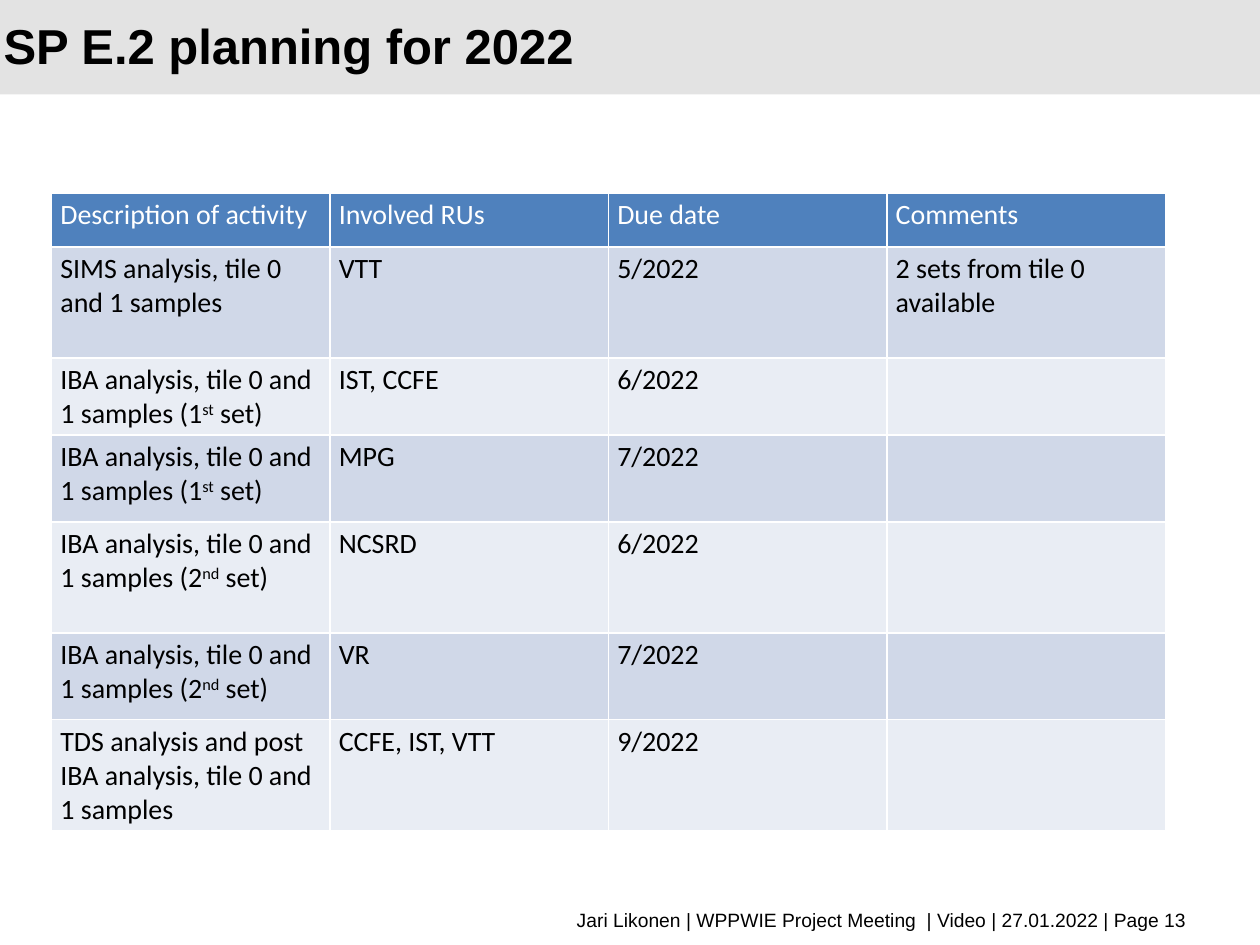
from dataclasses import dataclass

import lxml.etree
import pptx
import pptx.dml.color
import pptx.enum.shapes
import pptx.enum.text
import pptx.oxml.ns
import pptx.util

Inches = pptx.util.Inches
Pt = pptx.util.Pt
ALIGN = pptx.enum.text.PP_ALIGN
ANCHOR = pptx.enum.text.MSO_ANCHOR

COLORS = {
    "banner": "E3E3E3",
    "header": "4F81BD",
    "odd_row": "D0D8E8",
    "even_row": "E9EDF4",
    "white": "FFFFFF",
    "black": "000000",
}


@dataclass
class Activity:
    description: str  # a part between ^ marks is raised
    units: str
    due_date: str
    comments: str
    height: float


HEADER = Activity("Description of activity", "Involved RUs", "Due date", "Comments", 0.43)
FIRST_SET = "IBA analysis, tile 0 and 1 samples (1^st^ set)"
SECOND_SET = "IBA analysis, tile 0 and 1 samples (2^nd^ set)"
ACTIVITIES = [
    Activity("SIMS analysis, tile 0 and 1 samples", "VTT", "5/2022",
             "2 sets from tile 0 available", 0.88),
    Activity(FIRST_SET, "IST, CCFE", "6/2022", "", 0.6),
    Activity(FIRST_SET, "MPG", "7/2022", "", 0.69),
    Activity(SECOND_SET, "NCSRD", "6/2022", "", 0.88),
    Activity(SECOND_SET, "VR", "7/2022", "", 0.69),
    Activity("TDS analysis and post IBA analysis, tile 0 and 1 samples",
             "CCFE, IST, VTT", "9/2022", "", 0.87),
]
COLUMN_WIDTH = 2.21


def rgb(name: str) -> pptx.dml.color.RGBColor:
    return pptx.dml.color.RGBColor.from_string(COLORS[name])


def write_text(text_frame, text: str, *, size: float, font: str, color: str = "black",
               bold: bool = False, align=ALIGN.LEFT, line_spacing=None) -> None:
    paragraph = text_frame.paragraphs[0]
    paragraph.alignment = align
    paragraph.line_spacing = line_spacing
    paragraph.font.size = Pt(size)
    for index, part in enumerate(text.split("^")):
        if not part:
            continue
        run = paragraph.add_run()
        run.text = part
        run.font.size = Pt(size)
        run.font.name = font
        run.font.bold = bold
        run.font.color.rgb = rgb(color)
        if index % 2:
            run.font._element.set("baseline", "30000")


def add_text_box(slide, left: float, top: float, width: float, height: float, text: str,
                 *, anchor=ANCHOR.TOP, **text_format) -> None:
    box = slide.shapes.add_textbox(Inches(left), Inches(top), Inches(width), Inches(height))
    box.text_frame.word_wrap = True
    box.text_frame.vertical_anchor = anchor
    write_text(box.text_frame, text, **text_format)


def add_borders(cell) -> None:
    properties = cell._tc.get_or_add_tcPr()
    for side in ("a:lnL", "a:lnR", "a:lnT", "a:lnB"):
        line = lxml.etree.SubElement(properties, pptx.oxml.ns.qn(side), w=str(Pt(1)))
        fill = lxml.etree.SubElement(line, pptx.oxml.ns.qn("a:solidFill"))
        lxml.etree.SubElement(fill, pptx.oxml.ns.qn("a:srgbClr"), val=COLORS["white"])


def format_cell(cell, text: str, fill: str, color: str) -> None:
    cell.margin_left = cell.margin_right = Inches(0.07)
    cell.margin_top = cell.margin_bottom = Inches(0.04)
    write_text(cell.text_frame, text, size=16, font="Calibri", color=color)
    add_borders(cell)
    cell.fill.solid()
    cell.fill.fore_color.rgb = rgb(fill)


def add_activity_table(slide, left: float, top: float) -> None:
    rows = [HEADER, *ACTIVITIES]
    total_height = sum(row.height for row in rows)
    table = slide.shapes.add_table(len(rows), 4, Inches(left), Inches(top),
                                   Inches(4 * COLUMN_WIDTH), Inches(total_height)).table
    for column in table.columns:
        column.width = Inches(COLUMN_WIDTH)
    for index, row in enumerate(rows):
        table.rows[index].height = Inches(row.height)
        fill = "header" if index == 0 else "odd_row" if index % 2 else "even_row"
        color = "white" if index == 0 else "black"
        texts = (row.description, row.units, row.due_date, row.comments)
        for cell, text in zip(table.rows[index].cells, texts):
            format_cell(cell, text, fill, color)


def main() -> None:
    presentation = pptx.Presentation()
    presentation.slide_width = Inches(10)
    presentation.slide_height = Inches(7.5)
    slide = presentation.slides.add_slide(presentation.slide_layouts[6])

    # Title banner
    banner = slide.shapes.add_shape(pptx.enum.shapes.MSO_SHAPE.RECTANGLE,
                                    0, 0, Inches(10), Inches(0.75))
    banner.shadow.inherit = False
    banner.fill.solid()
    banner.fill.fore_color.rgb = rgb("banner")
    banner.line.fill.background()
    add_text_box(slide, -0.07, 0.12, 8.25, 0.5, "SP E.2 planning for 2022",
                 anchor=ANCHOR.MIDDLE, size=28, font="Arial", bold=True,
                 line_spacing=Pt(32))

    # Activities
    add_activity_table(slide, 0.41, 1.53)

    # Footer
    add_text_box(slide, 0.51, 7.16, 9.01, 0.29,
                 "Jari Likonen | WPPWIE Project Meeting  | Video | 27.01.2022 | Page 13",
                 size=11, font="Arial", align=ALIGN.RIGHT)

    presentation.save("out.pptx")


if __name__ == "__main__":
    main()
